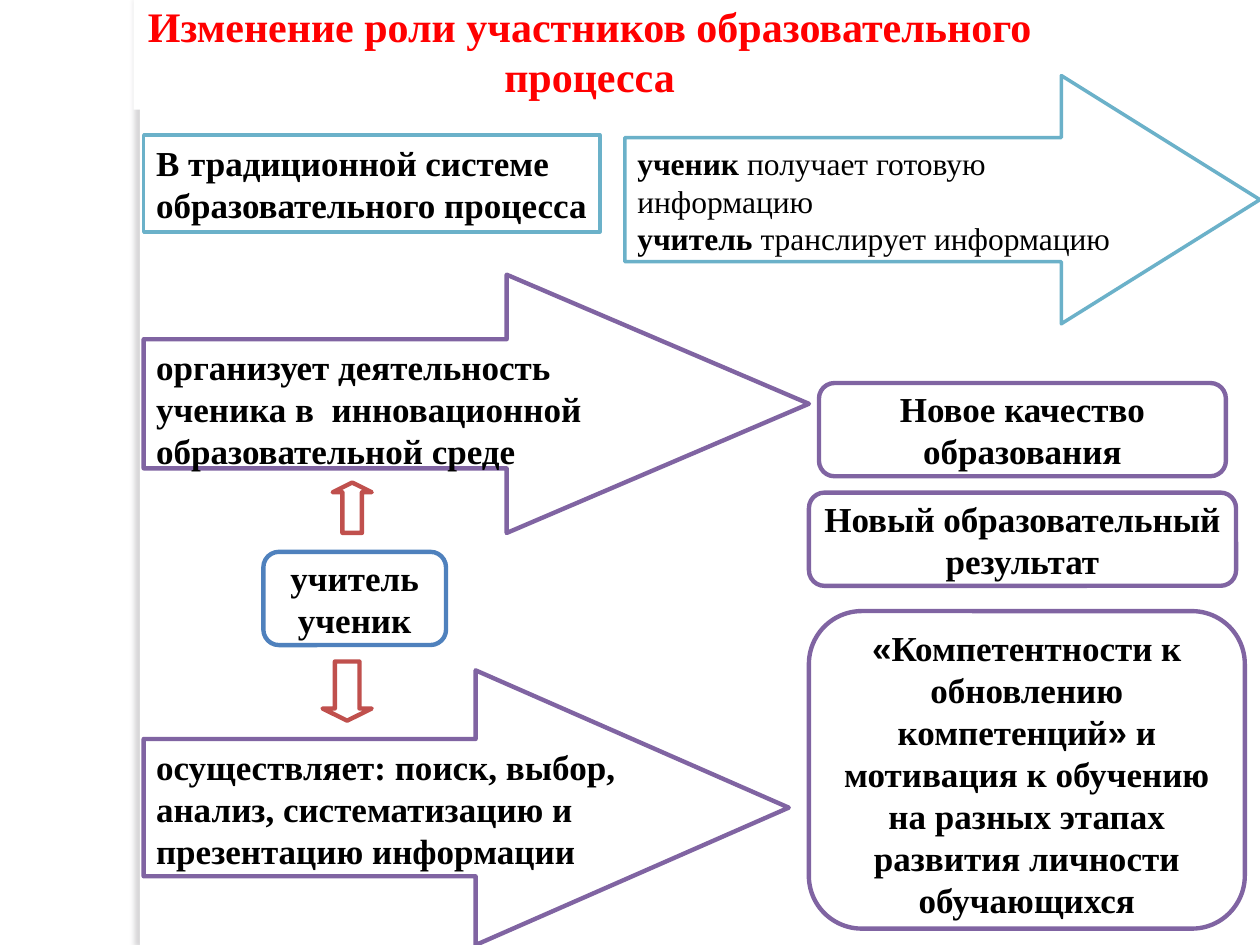
"""Build a slide on the changing roles of participants in education."""
from lxml import etree
from pptx import Presentation
from pptx import util as u
from pptx.dml.color import RGBColor
from pptx.enum import shapes, text
from pptx.oxml import ns

WHITE = RGBColor(0xFF, 0xFF, 0xFF)
BLACK = RGBColor(0, 0, 0)
RED = RGBColor(0xFF, 0, 0)
PURPLE = RGBColor(0x80, 0x64, 0xA2)
BLUE = RGBColor(0x4F, 0x81, 0xBD)
TEAL = RGBColor(0x6B, 0xB1, 0xC9)
BRICK = RGBColor(0xC0, 0x50, 0x4D)
SERIF, SANS = "Times New Roman", "Arial"
KIND = shapes.MSO_SHAPE
LEFT, CENTER = text.PP_ALIGN.LEFT, text.PP_ALIGN.CENTER

TITLE = "Изменение роли участников образовательного процесса"
TITLE_BOX = (1.06, 0, 7.24, 0.87)
EDGE_BOX = (1.11, 0, 0.08, 7.5)

ROUNDED = [
    ((6.5, 3.04, 3.23, 0.74), PURPLE, [["Новое качество образования"]]),
    ((2.09, 4.38, 1.45, 0.74), BLUE, [["учитель"], ["ученик"]]),
    ((6.42, 3.91, 3.39, 0.74), PURPLE, [["Новый образовательный"], ["результат"]]),
    ((6.42, 4.85, 3.46, 2.52), PURPLE, [[
        ("«", True, SANS),
        "Компетентности к обновлению компетенций",
        ("»", True, SANS),
        " и мотивация к обучению на разных этапах развития личности обучающихся",
    ]]),
]
TRADITION = ((1.14, 1.07, 3.62, 0.77), TEAL,
             [["В традиционной системе образовательного процесса"]])
BLOCK_ARROWS = [
    ((4.96, 0.6, 5.04, 1.97), 0.8, TEAL, 2, 18, [
        ["ученик", (" получает готовую информацию", False, SERIF)],
        ["учитель", (" транслирует информацию", False, SERIF)],
    ]),
    ((1.14, 2.18, 5.28, 2.05), 1.17, PURPLE, 2.5, 20,
     [["организует деятельность ученика в  инновационной образовательной среде"]]),
    ((1.14, 5.32, 5.12, 2.18), 1.14, PURPLE, 2.5, 20,
     [["осуществляет: поиск, выбор, анализ, систематизацию и презентацию информации"]]),
]
SMALL_ARROWS = [((2.64, 3.83, 0.31, 0.4), 0), ((2.56, 5.25, 0.39, 0.47), 180)]


def style_run(run, size, color, bold=True, font=SERIF):
    run.font.size = u.Pt(size)
    run.font.color.rgb = color
    run.font.bold = bold
    run.font.name = font


def prepare_frame(frame, inset):
    frame.word_wrap = True
    frame.auto_size = text.MSO_AUTO_SIZE.NONE
    frame.vertical_anchor = text.MSO_ANCHOR.TOP
    if not inset:
        frame.margin_left = frame.margin_right = 0
        frame.margin_top = frame.margin_bottom = 0


def write(frame, paragraphs, size, align, inset):
    prepare_frame(frame, inset)
    for index, parts in enumerate(paragraphs):
        paragraph = frame.add_paragraph() if index else frame.paragraphs[0]
        paragraph.alignment = align
        for part in parts:
            wording, bold, font = (part, True, SERIF) if isinstance(part, str) else part
            run = paragraph.add_run()
            run.text = wording
            style_run(run, size, BLACK, bold, font)


def add_outline(slide, kind, box, color=None, width=2.5):
    outline = slide.shapes.add_shape(kind, *map(u.Inches, box))
    outline.shadow.inherit = False
    outline.fill.solid()
    outline.fill.fore_color.rgb = WHITE
    if color is None:
        outline.line.fill.background()
    else:
        outline.line.color.rgb = color
        outline.line.width = u.Pt(width)
    return outline


def add_edge(slide):
    edge = add_outline(slide, KIND.RECTANGLE, EDGE_BOX)
    effects = edge._element.spPr.find(ns.qn("a:effectLst"))
    shadow = etree.SubElement(effects, ns.qn("a:outerShdw"), blurRad=str(u.Pt(3)),
                              dist=str(u.Pt(3)), dir=str(180 * 60000),
                              algn="ctr", rotWithShape="0")
    tint = etree.SubElement(shadow, ns.qn("a:srgbClr"), val="646068")
    etree.SubElement(tint, ns.qn("a:alpha"), val="25000")
    return edge


def add_title(slide):
    title = slide.shapes.title
    title.left, title.top, title.width, title.height = map(u.Inches, TITLE_BOX)
    title.fill.solid()
    title.fill.fore_color.rgb = WHITE
    title.text_frame.text = TITLE
    prepare_frame(title.text_frame, False)
    heading = title.text_frame.paragraphs[0]
    heading.alignment = CENTER
    style_run(heading.runs[0], 24, RED)
    return title


def main():
    deck = Presentation()
    deck.slide_width, deck.slide_height = u.Inches(10), u.Inches(7.5)
    slide = deck.slides.add_slide(deck.slide_layouts[5])

    edge = add_edge(slide)
    title = add_title(slide)
    title._element.addprevious(edge._element)

    box, color, paragraphs = TRADITION
    tradition = add_outline(slide, KIND.RECTANGLE, box, color, 2)
    write(tradition.text_frame, paragraphs, 20, LEFT, True)

    for box, depth, color, width, size, paragraphs in BLOCK_ARROWS:
        arrow = add_outline(slide, KIND.RIGHT_ARROW, box, color, width)
        arrow.adjustments[1] = depth
        write(arrow.text_frame, paragraphs, size, LEFT, True)

    for box, turn in SMALL_ARROWS:
        pointer = add_outline(slide, KIND.UP_ARROW, box, BRICK)
        pointer.adjustments[1] = 0.25
        pointer.rotation = turn

    for box, color, paragraphs in ROUNDED:
        outcome = add_outline(slide, KIND.ROUNDED_RECTANGLE, box, color)
        write(outcome.text_frame, paragraphs, 20, CENTER, False)

    deck.save("out.pptx")


if __name__ == "__main__":
    main()
